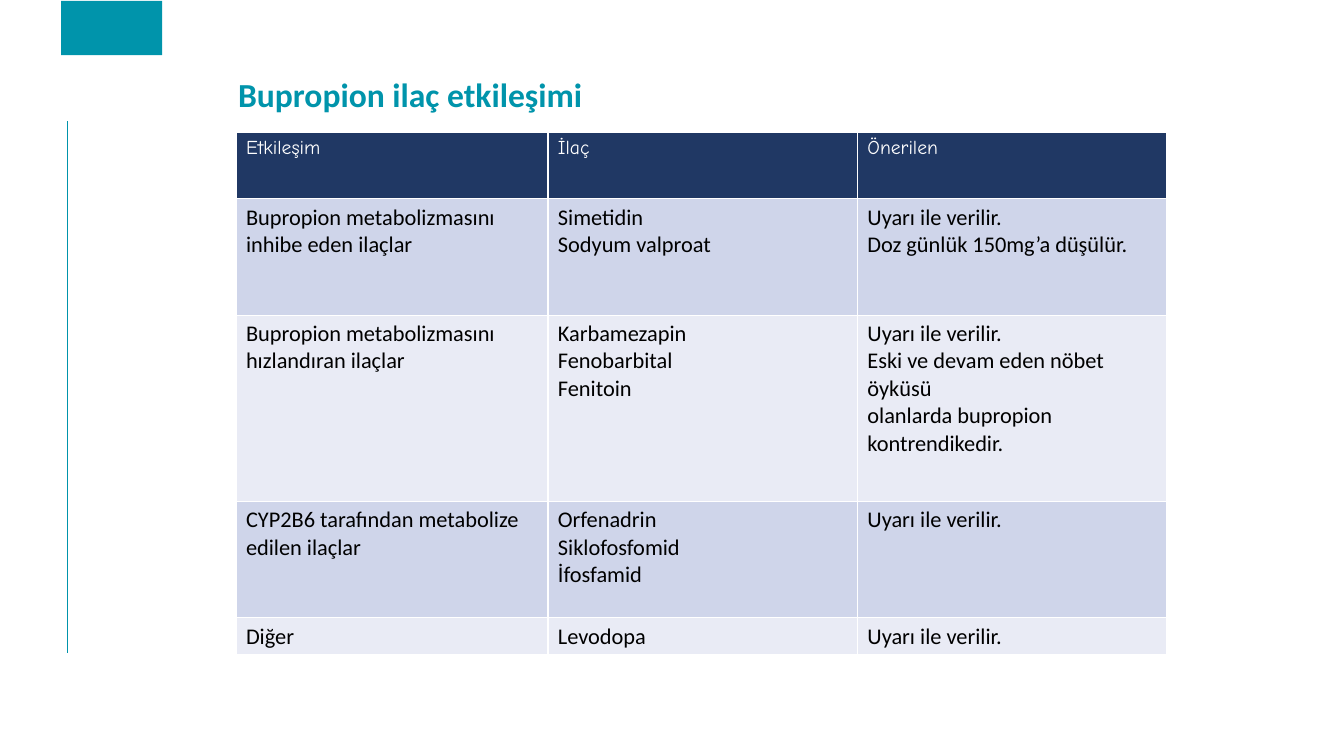
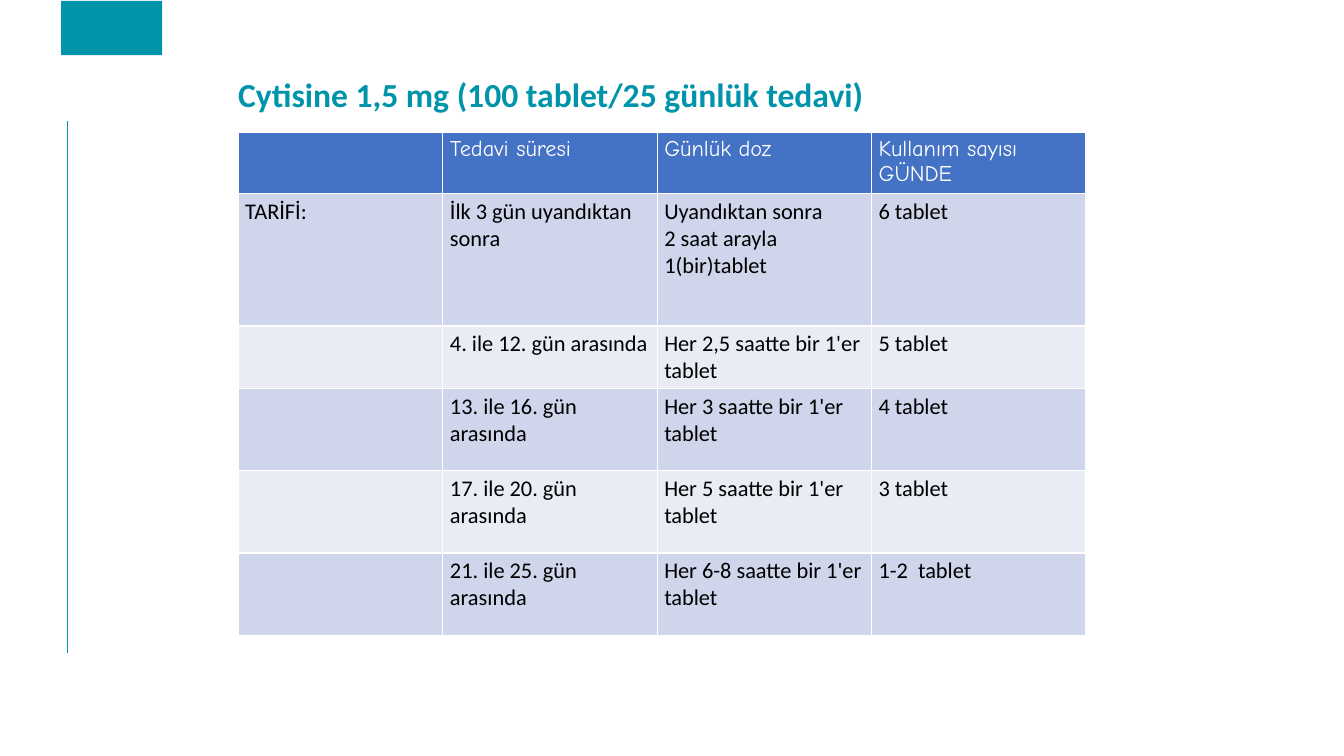
"""Two slides of drug tables: bupropion interactions and the cytisine schedule."""
from pptx import Presentation
from pptx.dml.color import RGBColor
from pptx.enum.shapes import MSO_CONNECTOR, MSO_SHAPE
from pptx.enum.text import MSO_ANCHOR
from pptx.oxml.ns import qn
from pptx.util import Cm, Pt
from lxml import etree

STRAIGHT = MSO_CONNECTOR.STRAIGHT
RECTANGLE = MSO_SHAPE.RECTANGLE
MIDDLE = MSO_ANCHOR.MIDDLE

TEAL = RGBColor(0x00, 0x94, 0xAB)
NAVY = RGBColor(0x20, 0x38, 0x64)
BLUE = RGBColor(0x44, 0x72, 0xC4)
BAND_DARK = RGBColor(0xCF, 0xD5, 0xEA)
BAND_LIGHT = RGBColor(0xE9, 0xEB, 0xF5)
WHITE = RGBColor(0xFF, 0xFF, 0xFF)
BLACK = RGBColor(0x00, 0x00, 0x00)

BODY_FONT = "Calibri"
HEADER_FONT = "Comic Neue"

TABLE_TOP = 3.33

pages = [
    {
        "title": "Bupropion ilaç etkileşimi",
        "left": 5.95,
        "columns": [7.86, 7.8, 7.8],
        "heights": [1.68, 2.93, 4.69, 2.93, 0.94],
        "margins": (0.25, 0.13),
        "header_fill": NAVY,
        "header_size": 14,
        "rows": [
            ["Etkileşim", "İlaç", "Önerilen"],
            ["Bupropion metabolizmasını\ninhibe eden ilaçlar",
             "Simetidin\nSodyum valproat",
             "Uyarı ile verilir.\nDoz günlük 150mg’a düşülür."],
            ["Bupropion metabolizmasını\nhızlandıran ilaçlar",
             "Karbamezapin\nFenobarbital\nFenitoin",
             "Uyarı ile verilir.\nEski ve devam eden nöbet öyküsü\n"
             "olanlarda bupropion kontrendikedir."],
            ["CYP2B6 tarafından metabolize\nedilen ilaçlar",
             "Orfenadrin\nSiklofosfomid\nİfosfamid",
             "Uyarı ile verilir."],
            ["Diğer", "Levodopa", "Uyarı ile verilir."],
        ],
    },
    {
        "title": "Cytisine 1,5 mg (100 tablet/25 günlük tedavi)",
        "left": 6,
        "columns": [5.16, 5.4, 5.4, 5.4],
        "heights": [1.47, 3.33, 1.58, 2.07, 2.07, 2.07],
        "margins": (0.18, 0.1),
        "header_fill": BLUE,
        "header_size": 16,
        "rows": [
            ["", "Tedavi süresi", "Günlük doz", "Kullanım sayısı\nGÜNDE"],
            ["TARİFİ:", "İlk 3 gün uyandıktan sonra",
             "Uyandıktan sonra\n2 saat arayla 1(bir)tablet", "6 tablet"],
            ["", "4. ile 12. gün arasında",
             "Her 2,5 saatte bir 1'er tablet", "5 tablet"],
            ["", "13. ile 16. gün arasında",
             "Her 3 saatte bir 1'er tablet", "4 tablet"],
            ["", "17. ile 20. gün arasında",
             "Her 5 saatte bir 1'er tablet", "3 tablet"],
            ["", "21. ile 25. gün arasında",
             "Her 6-8 saatte bir 1'er tablet", "1-2  tablet"],
        ],
    },
]


def set_font(paragraph, name, size, color, bold=False):
    paragraph.font.name = name
    paragraph.font.size = Pt(size)
    paragraph.font.color.rgb = color
    paragraph.font.bold = bold


def add_frame(slide, title):
    side_rule = slide.shapes.add_connector(
        STRAIGHT, Cm(1.7), Cm(3.05), Cm(1.7), Cm(16.45))
    side_rule.line.color.rgb = TEAL
    side_rule.line.width = Pt(1)
    properties = side_rule.element.find(qn("p:spPr"))
    etree.SubElement(properties, qn("a:effectLst"))

    corner_block = slide.shapes.add_shape(
        RECTANGLE, Cm(1.54), Cm(0.02), Cm(2.55), Cm(1.37))
    corner_block.shadow.inherit = False
    corner_block.fill.solid()
    corner_block.fill.fore_color.rgb = TEAL
    corner_block.line.fill.background()

    heading = slide.shapes.add_textbox(Cm(5.75), Cm(1.73), Cm(23.1), Cm(1.4))
    heading.text_frame.word_wrap = True
    heading.text_frame.vertical_anchor = MIDDLE
    heading.text_frame.text = title
    paragraph = heading.text_frame.paragraphs[0]
    paragraph.line_spacing = 0.9
    set_font(paragraph, BODY_FONT, 24, TEAL, bold=True)


presentation = Presentation()
presentation.slide_width = Cm(33.87)
presentation.slide_height = Cm(19.05)
blank_layout = presentation.slide_layouts[6]

for page in pages:
    slide = presentation.slides.add_slide(blank_layout)
    add_frame(slide, page["title"])

    rows, columns, heights = page["rows"], page["columns"], page["heights"]
    table = slide.shapes.add_table(
        len(rows), len(columns), Cm(page["left"]), Cm(TABLE_TOP),
        Cm(sum(columns)), Cm(sum(heights))).table
    for column, width in zip(table.columns, columns):
        column.width = Cm(width)
    for row, height in zip(table.rows, heights):
        row.height = Cm(height)

    side_margin, end_margin = page["margins"]
    for row_index, texts in enumerate(rows):
        if row_index == 0:
            fill = page["header_fill"]
            style = (HEADER_FONT, page["header_size"], WHITE)
        else:
            fill = BAND_DARK if row_index % 2 else BAND_LIGHT
            style = (BODY_FONT, 16, BLACK)
        for column_index, text in enumerate(texts):
            cell = table.cell(row_index, column_index)
            cell.fill.solid()
            cell.fill.fore_color.rgb = fill
            cell.margin_left = cell.margin_right = Cm(side_margin)
            cell.margin_top = cell.margin_bottom = Cm(end_margin)
            cell.text = text
            for paragraph in cell.text_frame.paragraphs:
                set_font(paragraph, *style)

presentation.save("out.pptx")
